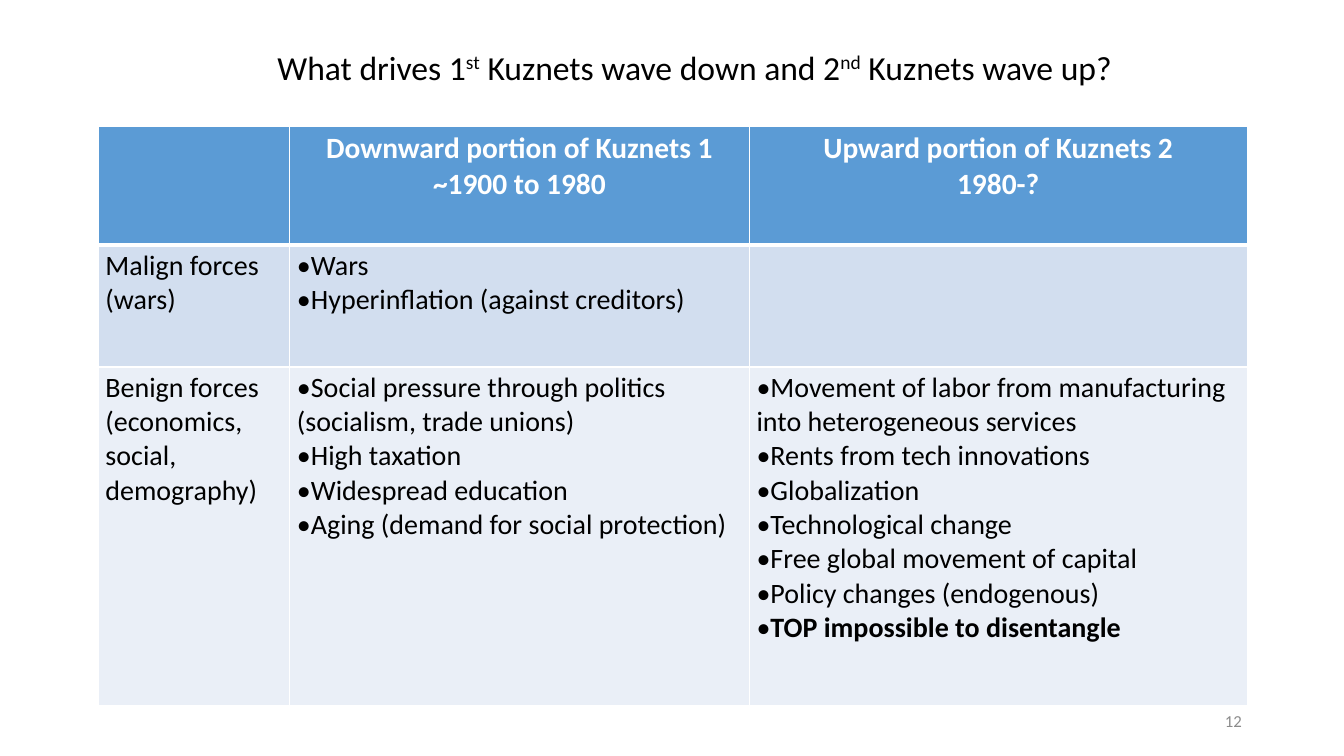
from dataclasses import dataclass
from typing import Optional

from lxml.etree import SubElement
from pptx import Presentation
from pptx.dml.color import RGBColor
from pptx.enum.text import MSO_ANCHOR, PP_ALIGN
from pptx.oxml.ns import qn
from pptx.util import Pt

COLORS = {
    "white": "FFFFFF", "black": "000000", "gray": "8C8C8C",
    "head": "5B9BD5", "malign": "D2DEEF", "benign": "EAEFF7",
}


@dataclass
class Span:
    text: str
    bold: bool = False
    raised: bool = False


@dataclass
class Style:
    size: int
    color: str
    align: PP_ALIGN = PP_ALIGN.LEFT
    bold: bool = False
    lead: Optional[float] = None


@dataclass
class Label:
    left: float
    top: float
    width: float
    height: float
    spans: list
    style: Style


@dataclass
class Row:
    height: float
    fill: str
    style: Style
    rule: int  # width of the line below
    cells: list


HEAD = Style(21, "white", PP_ALIGN.CENTER, bold=True)
BODY = Style(20, "black")
WIDTHS = [136.8, 328.3, 355.7]

LABELS = [
    Label(185.8, 23.8, 620.6, 51.1, [
        Span("What drives 1"), Span("st", raised=True),
        Span(" Kuznets wave down and 2"), Span("nd", raised=True),
        Span(" Kuznets wave up?"),
    ], Style(24, "black", PP_ALIGN.CENTER, lead=0.9)),
    Label(678.2, 500.4, 216, 28.8, [Span("12")],
          Style(12, "gray", PP_ALIGN.RIGHT)),
]

ROWS = [
    Row(84.8, "head", HEAD, 3, [
        [],
        ["Downward portion of Kuznets 1", "~1900 to 1980"],
        ["Upward portion of Kuznets 2", "1980-?"],
    ]),
    Row(87.1, "malign", BODY, 1, [
        ["Malign forces", "(wars)"],
        ["•Wars", "•Hyperinflation (against creditors)"],
        [],
    ]),
    Row(241.9, "benign", BODY, 1, [
        ["Benign forces", "(economics,", "social,", "demography)"],
        ["•Social pressure through politics (socialism, trade unions)",
         "•High taxation", "•Widespread education",
         "•Aging (demand for social protection)"],
        ["•Movement of labor from manufacturing into heterogeneous services",
         "•Rents from tech innovations", "•Globalization",
         "•Technological change", "•Free global movement of capital",
         "•Policy changes (endogenous)",
         [Span("•"), Span("TOP impossible to disentangle", bold=True)]],
    ]),
]


def rgb(name: str) -> RGBColor:
    return RGBColor.from_string(COLORS[name])


def write(para, spans: list, style: Style) -> None:
    para.alignment = style.align
    if style.lead:
        para.line_spacing = style.lead
    for span in spans:
        run = para.add_run()
        run.text = span.text
        font = run.font
        font.name = "Calibri"
        font.size = Pt(style.size)
        font.bold = style.bold or span.bold
        font.color.rgb = rgb(style.color)
        if span.raised:
            run._r.get_or_add_rPr().set("baseline", "30000")


def add_label(slide, label: Label) -> None:
    box = slide.shapes.add_textbox(Pt(label.left), Pt(label.top),
                                   Pt(label.width), Pt(label.height))
    frame = box.text_frame
    frame.word_wrap = True
    frame.vertical_anchor = MSO_ANCHOR.MIDDLE
    write(frame.paragraphs[0], label.spans, label.style)


def add_rules(cell, below: int) -> None:
    """Draw white lines on all four sides of a cell."""
    props = cell._tc.get_or_add_tcPr()
    for side, width in (("L", 1), ("R", 1), ("T", 1), ("B", below)):
        line = SubElement(props, qn(f"a:ln{side}"), w=str(Pt(width)))
        fill = SubElement(line, qn("a:solidFill"))
        SubElement(fill, qn("a:srgbClr"), val=COLORS["white"])


def fill_cell(cell, lines: list, row: Row) -> None:
    add_rules(cell, row.rule)
    cell.fill.solid()
    cell.fill.fore_color.rgb = rgb(row.fill)
    cell.margin_left = cell.margin_right = Pt(5.2)
    cell.margin_top = cell.margin_bottom = Pt(2.6)
    frame = cell.text_frame
    for num, line in enumerate(lines):
        para = frame.add_paragraph() if num else frame.paragraphs[0]
        write(para, [Span(line)] if isinstance(line, str) else line, row.style)


def add_grid(slide) -> None:
    high = sum(row.height for row in ROWS)
    table = slide.shapes.add_table(len(ROWS), len(WIDTHS), Pt(70.1), Pt(90.3),
                                   Pt(sum(WIDTHS)), Pt(high)).table
    for col, width in zip(table.columns, WIDTHS):
        col.width = Pt(width)
    for y, row in enumerate(ROWS):
        table.rows[y].height = Pt(row.height)
        for x, lines in enumerate(row.cells):
            fill_cell(table.cell(y, x), lines, row)


def main() -> None:
    deck = Presentation()
    deck.slide_width, deck.slide_height = Pt(960), Pt(540)
    slide = deck.slides.add_slide(deck.slide_layouts[6])
    title, number = LABELS
    add_label(slide, title)
    add_grid(slide)
    add_label(slide, number)
    deck.save("out.pptx")


if __name__ == "__main__":
    main()
